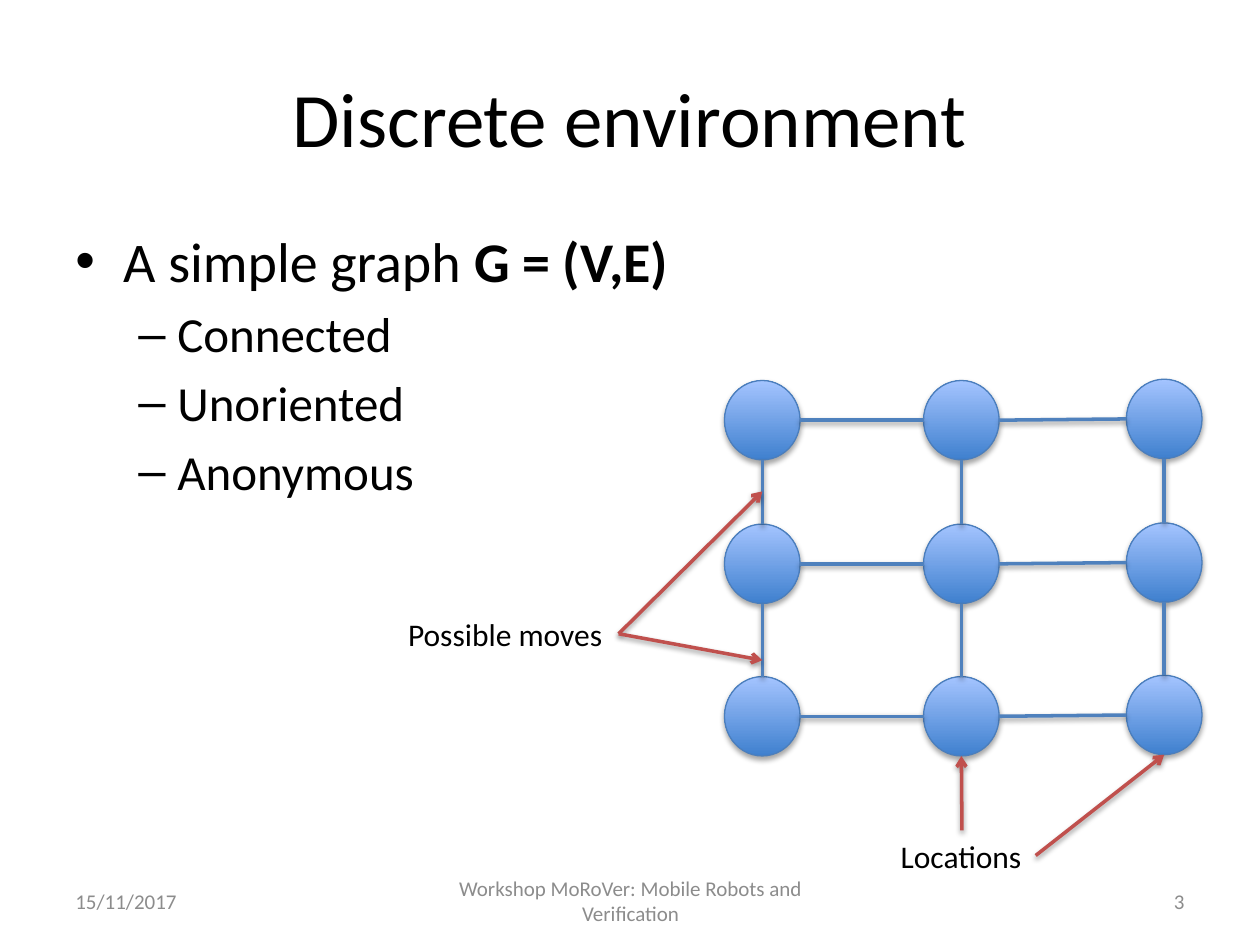
"""Build the slide on a discrete environment: bullets beside a 3 by 3 grid graph."""
from itertools import product

from lxml import etree
from pptx import Presentation
from pptx.dml.color import RGBColor
from pptx.enum.shapes import MSO_CONNECTOR, MSO_SHAPE
from pptx.enum.text import MSO_ANCHOR, MSO_AUTO_SIZE, PP_ALIGN
from pptx.oxml import parse_xml
from pptx.oxml.ns import qn
from pptx.util import Inches, Pt

LINE, OVAL = MSO_CONNECTOR.STRAIGHT, MSO_SHAPE.OVAL
LEFT, MID, RIGHT = PP_ALIGN.LEFT, PP_ALIGN.CENTER, PP_ALIGN.RIGHT
TOP, HALF = MSO_ANCHOR.TOP, MSO_ANCHOR.MIDDLE
GROW = MSO_AUTO_SIZE.SHAPE_TO_FIT_TEXT
NS = "http://schemas.openxmlformats.org/drawingml/2006/main"

THEME = {
    "font": "Calibri", "ink": "000000", "gray": "8C8C8C",
    "edge": "4F81BD", "mark": "C0504D", "rim": "4B7EBC",
    "grad": ("3F80CE", "A4C4FF"),
    "title": 44, "body": (32, 28), "label": 18, "foot": 12,
}
TITLE = "Discrete environment"
POINTS = [
    (0, [("A simple graph ", False), ("G = (V,E)", True)]),
    (1, [("Connected", False)]),
    (1, [("Unoriented", False)]),
    (1, [("Anonymous", False)]),
]
LEVELS = [("•", 0.38, -0.38), ("–", 0.81, -0.31)]
FOOT = [
    ("15/11/2017", 0.5, 2.33, LEFT),
    ("Workshop MoRoVer: Mobile Robots and Verification", 3.42, 3.17, MID),
    ("3", 7.17, 2.33, RIGHT),
]
LABELS = {
    "Locations": (7.05, 6.59, 1.17, 0.4),
    "Possible moves": (3.14, 4.83, 1.77, 0.4),
}
COLS, ROWS, LIFT = (6.05, 7.63, 9.24), (3.335, 4.475, 5.685), (0, 0, 0.01)
WIDE, HIGH = 0.6, 0.63


def color(key):
    return RGBColor.from_string(THEME.get(key, key))


def style(run, size, ink="ink", bold=False):
    for name, value in {"name": THEME["font"], "size": Pt(size), "bold": bold}.items():
        setattr(run.font, name, value)
    run.font.color.rgb = color(ink)


def box(slide, place, **form):
    frame = slide.shapes.add_textbox(*map(Inches, place)).text_frame
    for name, value in {"word_wrap": True, "vertical_anchor": TOP, **form}.items():
        setattr(frame, name, value)
    return frame


def write(frame, text, size, ink="ink", align=LEFT):
    para = frame.paragraphs[0]
    para.alignment = align
    run = para.add_run()
    run.text = text
    style(run, size, ink)


def shade(shape, dist, alpha):
    shape._element.spPr.append(parse_xml(
        f'<a:effectLst xmlns:a="{NS}"><a:outerShdw blurRad="{Pt(3.1)}" '
        f'dist="{Pt(dist)}" dir="5400000" rotWithShape="0"><a:srgbClr val="000000">'
        f'<a:alpha val="{alpha}000"/></a:srgbClr></a:outerShdw></a:effectLst>'))


def link(slide, start, end, ink="edge", arrow=False):
    line = slide.shapes.add_connector(LINE, *map(Inches, (*start, *end)))
    line.line.color.rgb, line.line.width = color(ink), Pt(2)
    if arrow:
        etree.SubElement(line.line._get_or_add_ln(), qn("a:tailEnd"), type="arrow")
    shade(line, 1.6, 38)
    return line


def node(slide, x, y):
    place = x - WIDE / 2, y - HIGH / 2, WIDE, HIGH
    oval = slide.shapes.add_shape(OVAL, *map(Inches, place))
    oval.fill.gradient()
    oval.fill.gradient_angle = 90
    for stop, tint, spot in zip(oval.fill.gradient_stops, THEME["grad"], (0, 1)):
        stop.color.rgb, stop.position = color(tint), spot
    oval.line.color.rgb, oval.line.width = color("rim"), Pt(0.75)
    shade(oval, 1.8, 35)


def list_points(frame):
    for i, (level, parts) in enumerate(POINTS):
        para = frame.add_paragraph() if i else frame.paragraphs[0]
        size, (sign, left, hang) = THEME["body"][level], LEVELS[level]
        para.level, para.space_before = level, Pt(size * 0.2)
        props = para._p.get_or_add_pPr()
        for name, value in {"marL": left, "indent": hang}.items():
            props.set(name, str(Inches(value)))
        etree.SubElement(props, qn("a:buFont"), typeface="Arial")
        etree.SubElement(props, qn("a:buChar"), char=sign)
        for text, bold in parts:
            run = para.add_run()
            run.text = text
            style(run, size, bold=bold)


def graph(slide):
    spots = {(c, r): (COLS[c], ROWS[r] - LIFT[c])
             for c, r in product(range(3), repeat=2)}
    for x, y in spots.values():
        node(slide, x, y)
    for (c, r), (x, y) in spots.items():
        if c < 2:
            nx, ny = spots[c + 1, r]
            link(slide, (x + WIDE / 2, y), (nx - WIDE / 2, ny))
        if r < 2:
            nx, ny = spots[c, r + 1]
            link(slide, (x, y + HIGH / 2), (nx, ny - HIGH / 2))
    return spots


def notes(slide, spots):
    tags = {}
    for text, place in LABELS.items():
        frame = box(slide, place, word_wrap=False, auto_size=GROW)
        write(frame, text, THEME["label"])
        tags[text] = slide.shapes[-1]
    feet = [(x, y + HIGH / 2) for x, y in (spots[1, 2], spots[2, 2])]
    aims = [
        ("Possible moves", 3, (COLS[0], 3.9)),
        ("Possible moves", 3, (COLS[0], 5.24)),
        ("Locations", 3, feet[1]),
        ("Locations", 0, feet[0]),
    ]
    for text, side, end in aims:
        link(slide, end, end, "mark", True).begin_connect(tags[text], side)


def main():
    deck = Presentation()
    deck.slide_width, deck.slide_height = Inches(10), Inches(7.5)
    slide = deck.slides.add_slide(deck.slide_layouts[6])
    head = box(slide, (0.5, 0.3, 9, 1.25), vertical_anchor=HALF)
    write(head, TITLE, THEME["title"], align=MID)
    list_points(box(slide, (0.5, 1.75, 9, 4.95)))
    for text, left, width, align in FOOT:
        frame = box(slide, (left, 6.95, width, 0.4), vertical_anchor=HALF)
        write(frame, text, THEME["foot"], "gray", align)
    notes(slide, graph(slide))
    deck.save("out.pptx")


if __name__ == "__main__":
    main()
